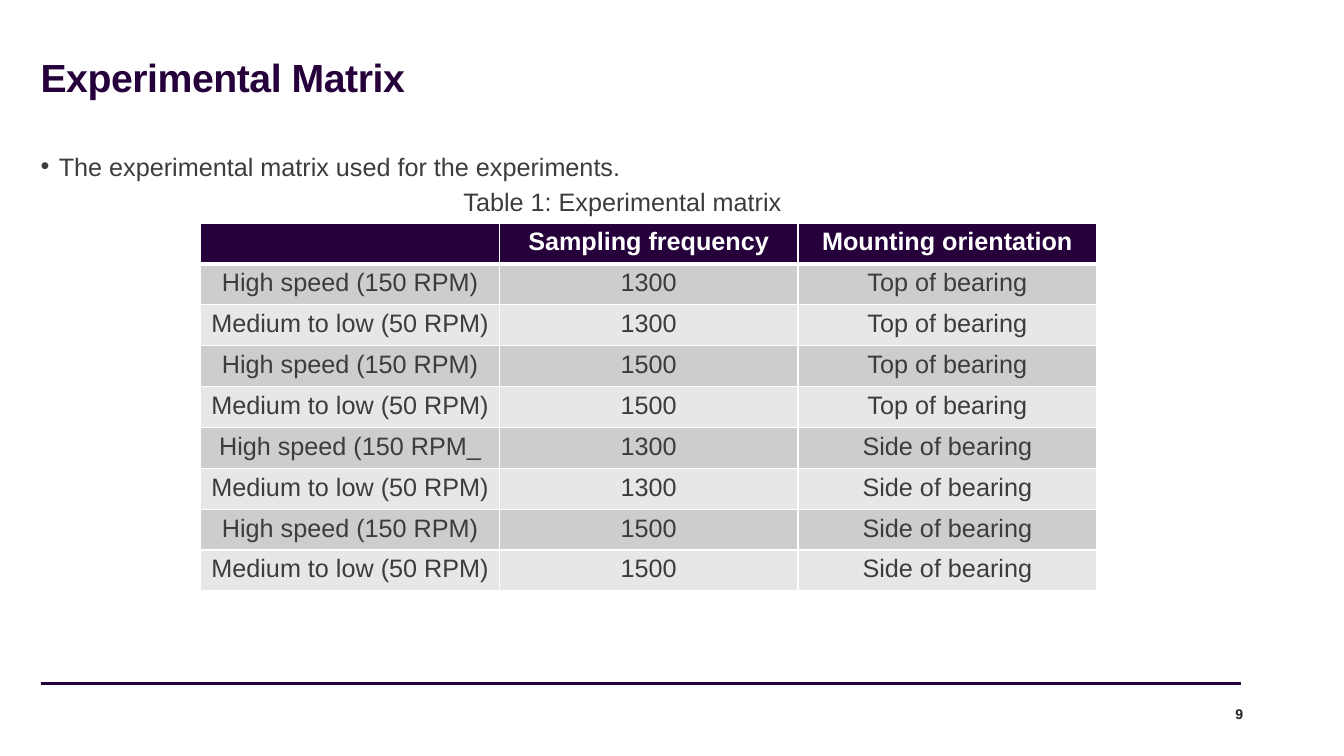
from dataclasses import dataclass

from pptx import Presentation
from pptx.dml.color import RGBColor as RGB
from pptx.enum.shapes import MSO_CONNECTOR as CONN
from pptx.enum.text import MSO_ANCHOR as ANCHOR, PP_ALIGN as ALIGN
from pptx.oxml.ns import qn
from pptx.util import Pt
from lxml.etree import SubElement


@dataclass(frozen=True)
class Theme:
    font: str = "Arial"
    accent: str = "26003B"
    text: str = "3C3C3C"
    number: str = "1E1E1E"
    white: str = "FFFFFF"
    bands: tuple = ("CDCCCE", "E8E7E8")
    title_size: int = 28
    body_size: int = 18
    number_size: int = 10


THEME = Theme()

HEADER = ("", "Sampling frequency", "Mounting orientation")
HIGH, LOW = "High speed (150 RPM)", "Medium to low (50 RPM)"
TOP, SIDE = "Top of bearing", "Side of bearing"
RUNS = (
    (HIGH, "1300", TOP),
    (LOW, "1300", TOP),
    (HIGH, "1500", TOP),
    (LOW, "1500", TOP),
    ("High speed (150 RPM_", "1300", SIDE),
    (LOW, "1300", SIDE),
    (HIGH, "1500", SIDE),
    (LOW, "1500", SIDE),
)


def style_runs(p, color, size=THEME.body_size, bold=False):
    for r in p.runs:
        r.font.name = THEME.font
        r.font.size = Pt(size)
        r.font.bold = bold
        r.font.color.rgb = RGB.from_string(color)


def add_text(slide, box, text, margins, anchor=ANCHOR.TOP, wrap=True):
    """Add a text box; box is x, y, w, h and margins l, t, r, b, in points."""
    tf = slide.shapes.add_textbox(*map(Pt, box)).text_frame
    tf.word_wrap = wrap
    tf.vertical_anchor = anchor
    tf.margin_left, tf.margin_top, tf.margin_right, tf.margin_bottom = map(Pt, margins)
    tf.text = text
    return tf.paragraphs[0]


def add_title(slide, box, text):
    p = add_text(slide, box, text, (0, 0, 0, 0), ANCHOR.BOTTOM)
    p.line_spacing = 0.9
    style_runs(p, THEME.accent, THEME.title_size, bold=True)
    for r in p.runs:
        r.font._element.set("spc", "-30")


def add_bullet(slide, box, text):
    p = add_text(slide, box, text, (0, 3.6, 7.2, 3.6))
    p.line_spacing = 1.2
    pPr = p._p.get_or_add_pPr()
    pPr.set("marL", str(Pt(13)))
    pPr.set("indent", str(-Pt(13)))
    SubElement(pPr, qn("a:buFont")).set("typeface", THEME.font)
    SubElement(pPr, qn("a:buChar")).set("char", "•")
    style_runs(p, THEME.text)


def add_caption(slide, box, text):
    p = add_text(slide, box, text, (7.2, 3.6, 7.2, 3.6), wrap=False)
    style_runs(p, THEME.text)


def set_borders(cell, bottom):
    """Give a cell thin white borders and a bottom border of its own width."""
    tcPr = cell._tc.get_or_add_tcPr()
    for side, width in (("L", 1), ("R", 1), ("T", 1), ("B", bottom)):
        ln = SubElement(tcPr, qn(f"a:ln{side}"), w=str(Pt(width)))
        fill = SubElement(ln, qn("a:solidFill"))
        SubElement(fill, qn("a:srgbClr"), val=THEME.white)


def add_matrix(slide, box, rows):
    x, y, w, h = box
    n_rows, n_cols = len(rows), len(rows[0])
    table = slide.shapes.add_table(n_rows, n_cols, *map(Pt, box)).table
    for col in table.columns:
        col.width = Pt(w / n_cols)
    for row in table.rows:
        row.height = Pt(h / n_rows)
    for i, row in enumerate(rows):
        is_header = i == 0
        fill = THEME.accent if is_header else THEME.bands[(i - 1) % 2]
        for j, text in enumerate(row):
            cell = table.cell(i, j)
            set_borders(cell, bottom=3 if is_header else 1)
            if is_header and i + 1 < n_rows:
                cell.vertical_anchor = ANCHOR.TOP
            cell.fill.solid()
            cell.fill.fore_color.rgb = RGB.from_string(fill)
            cell.text_frame.text = text
            p = cell.text_frame.paragraphs[0]
            p.alignment = ALIGN.CENTER
            style_runs(p, THEME.white if is_header else THEME.text, bold=is_header)
    # The rule under the header is shared with the first row of data.
    for cell in table.rows[1].cells:
        cell._tc.tcPr.find(qn("a:lnT")).set("w", str(Pt(3)))


def add_footer(slide, box, number):
    """Draw a rule along the top of the box and the page number at its right."""
    x, y, w, h = box
    rule = slide.shapes.add_connector(CONN.STRAIGHT, Pt(x), Pt(y), Pt(x + w), Pt(y))
    rule.line.color.rgb = RGB.from_string(THEME.accent)
    rule.line.width = Pt(2.25)
    SubElement(rule._element.spPr, qn("a:effectLst"))
    number_box = (x + w - 37.5, y + h - 17.3, 39, 17.3)
    p = add_text(slide, number_box, number, (0, 0, 0, 0), ANCHOR.MIDDLE)
    p.alignment = ALIGN.RIGHT
    style_runs(p, THEME.number, THEME.number_size, bold=True)


def main():
    prs = Presentation()
    prs.slide_width, prs.slide_height = Pt(960), Pt(540)
    slide = prs.slides.add_slide(prs.slide_layouts[6])
    left, width = 29, 901
    add_footer(slide, (left, 488.2, 857.5, 30.2), "9")
    add_bullet(slide, (left, 100, width, 371.5),
               "The experimental matrix used for the experiments.")
    add_title(slide, (left, 15, width, 57), "Experimental Matrix")
    add_matrix(slide, (143.4, 159.3, 640, 262.8), (HEADER, *RUNS))
    add_caption(slide, (324, 129.8, 249, 29), "Table 1: Experimental matrix")
    prs.save("out.pptx")


if __name__ == "__main__":
    main()
